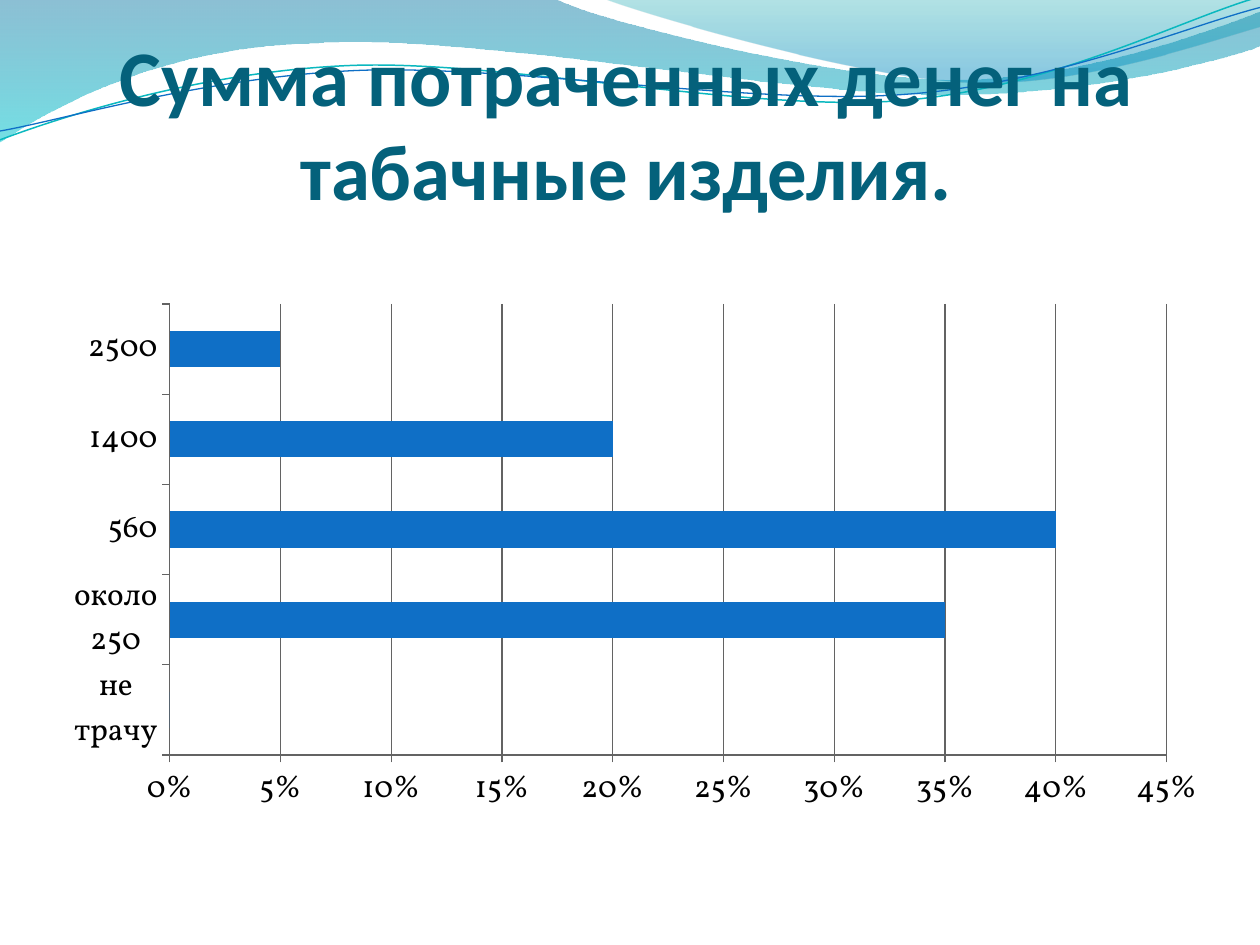
"""Build a slide with a bar chart of money spent on tobacco under a wave banner."""
import math
from dataclasses import dataclass

import lxml.etree
import pptx
import pptx.chart.data
import pptx.dml.color
import pptx.enum.chart
import pptx.enum.text
import pptx.oxml
import pptx.oxml.ns
import pptx.util
from pptx.util import Inches

COLORS = {
    "deep": "0074A1", "aqua": "00C6CF", "teal": "00A1A9", "sky": "008BBF",
    "line_teal": "0AB8BF", "blue": "0F6FC6", "title": "04617B",
    "text": "000000", "axis": "636363",
}
LINE_TILT = -2.7

Point = tuple[float, float]


@dataclass(frozen=True)
class Stop:
    """One gradient stop: colour name, position and opacity."""
    color: str
    position: float
    opacity: int


@dataclass(frozen=True)
class Band:
    """A filled wave; each segment holds one line end or three curve points."""
    start: Point
    segments: list[list[Point]]
    stops: tuple[Stop, Stop]


@dataclass(frozen=True)
class Strand:
    """A tilted thin wave line and the centre of its tilt."""
    start: Point
    segments: list[list[Point]]
    center: Point
    color: str
    width: float


BANDS = [
    Band((0, 0), [
        [(4.4, -0.01)],
        [(4.76, 0.17), (6.64, 0.63), (7.58, 0.63)],
        [(8.53, 0.63), (9.58, 0.26), (10, 0.09)],
        [(10.01, 0.36)],
        [(9.83, 0.44), (8.7, 0.76), (7.46, 0.75)],
        [(6.22, 0.75), (3.82, 0.28), (2.57, 0.34)],
        [(1.29, 0.36), (0.46, 0.83), (-0.01, 1.13)],
        [(0, 0)],
    ], (Stop("deep", 0, 45), Stop("aqua", 1, 55))),
    Band((4.79, -0.01), [
        [(5.09, 0.11), (6.82, 0.62), (7.69, 0.65)],
        [(8.56, 0.69), (9.61, 0.32), (10, 0.21)],
        [(10, 0)],
        [(4.79, -0.01)],
    ], (Stop("teal", 0, 30), Stop("sky", 0.8, 45))),
]
STRANDS = [
    Strand((0, 1.11), [
        [(0.48, 0.93), (1.58, 0.57), (2.77, 0.52)],
        [(3.95, 0.47), (5.93, 0.89), (7.13, 0.8)],
        [(8.33, 0.71), (9.38, 0.15), (9.98, -0.02)],
    ], (4.99, 0.58), "line_teal", 0.85),
    Strand((0, 1.04), [
        [(0.47, 0.96), (1.64, 0.61), (2.83, 0.56)],
        [(4.03, 0.51), (5.97, 0.84), (7.17, 0.75)],
        [(8.36, 0.67), (9.41, 0.21), (10, 0.06)],
    ], (5, 0.59), "blue", 0.75),
]
SPENDING = {"не трачу": 0, "около 250": 0.35, "560": 0.4, "1400": 0.2, "2500": 0.05}
PLOT_LAYOUT = {"x": 0.095, "y": 0.061, "w": 0.888, "h": 0.746}


def rgb(name: str) -> pptx.dml.color.RGBColor:
    """Return the named palette colour."""
    return pptx.dml.color.RGBColor.from_string(COLORS[name])


def level(point: Point, center: Point) -> Point:
    """Undo the line tilt around the given centre."""
    angle = math.radians(-LINE_TILT)
    dx, dy = point[0] - center[0], point[1] - center[1]
    return (center[0] + dx * math.cos(angle) - dy * math.sin(angle),
            center[1] + dx * math.sin(angle) + dy * math.cos(angle))


def add_outline(shapes, start: Point, segments: list[list[Point]], closed: bool):
    """Add a shadowless freeform of lines and cubic curves given in inches."""
    builder = shapes.build_freeform(Inches(start[0]), Inches(start[1]))
    corners = [(Inches(x), Inches(y)) for segment in segments for x, y in segment]
    builder.add_line_segments(corners, close=closed)
    outline = builder.convert_to_shape()
    outline.shadow.inherit = False
    qn = pptx.oxml.ns.qn
    steps = iter(list(outline._element.spPr.iter(qn("a:lnTo"))))
    for segment in segments:
        parts = [next(steps) for _ in segment]
        if len(parts) == 3:
            curve = pptx.oxml.parse_xml(
                f'<a:cubicBezTo {pptx.oxml.ns.nsdecls("a")}/>')
            parts[0].addprevious(curve)
            for part in parts:
                curve.append(part[0])
                part.getparent().remove(part)
    return outline


def add_band(shapes, band: Band) -> None:
    """Add a wave with a translucent top-to-bottom gradient."""
    wave = add_outline(shapes, band.start, band.segments, True)
    wave.line.fill.background()
    wave.fill.gradient()
    wave.fill.gradient_angle = 270
    for target, stop in zip(wave.fill.gradient_stops, band.stops):
        target.color.rgb = rgb(stop.color)
        target.position = stop.position
    swatches = wave._element.spPr.iter(pptx.oxml.ns.qn("a:srgbClr"))
    for swatch, stop in zip(swatches, band.stops):
        alpha = lxml.etree.SubElement(swatch, pptx.oxml.ns.qn("a:alpha"))
        alpha.set("val", str(stop.opacity * 1000))


def add_strand(shapes, strand: Strand) -> None:
    """Add a tilted thin wave line."""
    segments = [[level(p, strand.center) for p in part] for part in strand.segments]
    wave = add_outline(shapes, level(strand.start, strand.center), segments, False)
    wave.rotation = LINE_TILT
    wave.fill.background()
    wave.line.color.rgb = rgb(strand.color)
    wave.line.width = pptx.util.Pt(strand.width)


def fill_title(slide) -> None:
    """Place and format the title above the waves."""
    title = slide.shapes.title
    slide.shapes._spTree.append(title._element)
    title.left, title.top = Inches(0.47), Inches(0.31)
    title.width, title.height = Inches(9), Inches(1.41)
    frame = title.text_frame
    frame.auto_size = pptx.enum.text.MSO_AUTO_SIZE.NONE
    frame.word_wrap = True
    frame.vertical_anchor = pptx.enum.text.MSO_ANCHOR.BOTTOM
    frame.margin_left = frame.margin_right = frame.margin_bottom = 0
    frame.margin_top = Inches(0.05)
    paragraph = frame.paragraphs[0]
    paragraph.alignment = pptx.enum.text.PP_ALIGN.CENTER
    run = paragraph.add_run()
    run.text = "Сумма потраченных денег на табачные изделия."
    run.font.name, run.font.size, run.font.bold = "Calibri", pptx.util.Pt(45), True
    run.font.color.rgb = rgb("title")


def add_spending_chart(slide) -> None:
    """Add the bar chart of spending shares."""
    spending = pptx.chart.data.CategoryChartData(number_format="0%")
    spending.categories = list(SPENDING)
    spending.add_series("Series 1", list(SPENDING.values()))
    chart = slide.shapes.add_chart(
        pptx.enum.chart.XL_CHART_TYPE.BAR_CLUSTERED,
        Inches(0.5), Inches(2.12), Inches(9), Inches(4.8), spending).chart
    chart.has_title = chart.has_legend = False
    chart.font.name, chart.font.size = "Vollkorn", pptx.util.Pt(18)
    chart.font.color.rgb = rgb("text")
    bars = chart.plots[0]
    bars.gap_width, bars.vary_by_categories = 150, False
    bars.series[0].format.fill.solid()
    bars.series[0].format.fill.fore_color.rgb = rgb("blue")
    shares = chart.value_axis
    shares.tick_labels.number_format = "0%"
    shares.tick_labels.number_format_is_linked = False
    shares.has_major_gridlines = True
    for axis in (chart.category_axis, shares):
        axis.major_tick_mark = pptx.enum.chart.XL_TICK_MARK.OUTSIDE
    for ruled in (chart.category_axis, shares, shares.major_gridlines):
        ruled.format.line.color.rgb = rgb("axis")
    place_plot(chart)


def place_plot(chart) -> None:
    """Fix the inner plot area inside the chart."""
    qn = pptx.oxml.ns.qn
    plot_area = chart._chartSpace.chart.plotArea
    for previous in plot_area.findall(qn("c:layout")):
        plot_area.remove(previous)
    layout = pptx.oxml.parse_xml(f'<c:layout {pptx.oxml.ns.nsdecls("c")}/>')
    manual = lxml.etree.SubElement(layout, qn("c:manualLayout"))
    settings = {"layoutTarget": "inner", "xMode": "edge", "yMode": "edge", **PLOT_LAYOUT}
    for tag, value in settings.items():
        lxml.etree.SubElement(manual, qn(f"c:{tag}")).set("val", str(value))
    plot_area.insert(0, layout)


def main() -> None:
    """Build and save the presentation."""
    deck = pptx.Presentation()
    deck.slide_width, deck.slide_height = Inches(10), Inches(7.5)
    slide = deck.slides.add_slide(deck.slide_layouts[5])
    for band in BANDS:
        add_band(slide.shapes, band)
    strands = slide.shapes.add_group_shape()
    for strand in STRANDS:
        add_strand(strands.shapes, strand)
    fill_title(slide)
    add_spending_chart(slide)
    deck.save("out.pptx")


if __name__ == "__main__":
    main()
